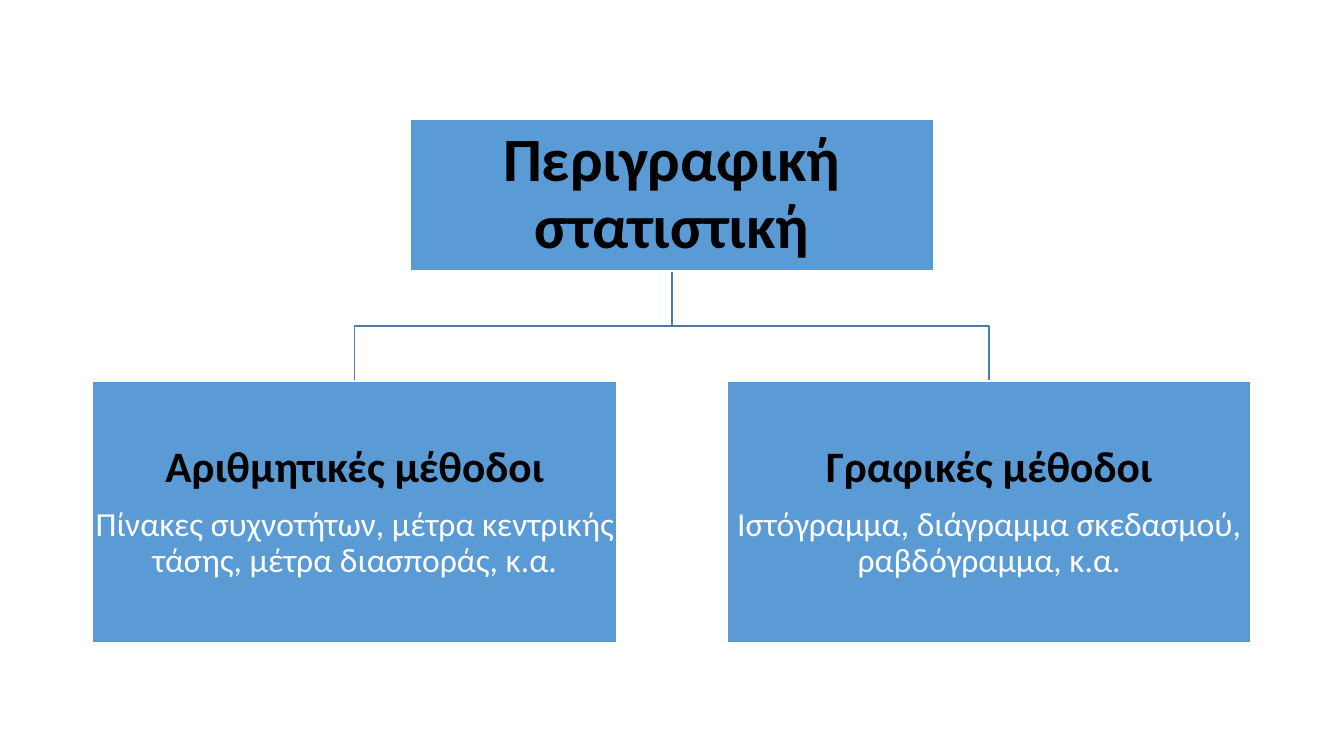
from pptx import Presentation
from pptx.dml.color import RGBColor as RGB
from pptx.enum.shapes import MSO_SHAPE as Shape
from pptx.enum.text import MSO_ANCHOR as Anchor, PP_ALIGN as Align
from pptx.util import Pt

ROOT = [("Περιγραφική στατιστική", "root")]
LEAVES = [
    [("Αριθμητικές μέθοδοι", "head"),
     ("Πίνακες συχνοτήτων, μέτρα κεντρικής τάσης, μέτρα διασποράς, κ.α.", "body")],
    [("Γραφικές μέθοδοι", "head"),
     ("Ιστόγραμμα, διάγραμμα σκεδασμού, ραβδόγραμμα, κ.α.", "body")],
]

THEME = {
    "box": RGB(0x5B, 0x9B, 0xD5),
    "edge": RGB(0xFF, 0xFF, 0xFF),
    "link": RGB(0x49, 0x7C, 0xAB),
    "font": "Calibri",
    "root": {"size": 44, "bold": True, "color": RGB(0, 0, 0)},
    "head": {"size": 31, "bold": True, "color": RGB(0, 0, 0)},
    "body": {"size": 24, "bold": False, "color": RGB(0xFF, 0xFF, 0xFF)},
}

WIDE, HIGH = 960, 540
BOX_W, GAP = 374.4, 78.7
ROOT_TOP, ROOT_H = 85, 108.7
LEAF_TOP, LEAF_H = 272.2, 187.2
ROOT_PAD, LEAF_PAD = 2.2, 1.2


def assign(item, values):
    for name, value in values.items():
        setattr(item, name, value)


def outline(shape, color):
    shape.shadow.inherit = False
    shape.line.color.rgb = color
    shape.line.width = Pt(1)


def add_link(slide, start, end):
    """Draw an elbow that turns halfway down."""
    (x, top), (to, low) = start, end
    mid = (top + low) / 2
    pen = slide.shapes.build_freeform(Pt(x), Pt(top))
    pen.add_line_segments(
        [(Pt(a), Pt(b)) for a, b in ((x, mid), (to, mid), (to, low))],
        close=False)
    link = pen.convert_to_shape()
    link.fill.background()
    outline(link, THEME["link"])


def add_box(slide, mid, top, height, pad, lines):
    box = slide.shapes.add_shape(
        Shape.RECTANGLE, Pt(mid - BOX_W / 2), Pt(top), Pt(BOX_W), Pt(height))
    box.fill.solid()
    box.fill.fore_color.rgb = THEME["box"]
    outline(box, THEME["edge"])
    frame = box.text_frame
    assign(frame, {"word_wrap": True, "vertical_anchor": Anchor.MIDDLE})
    assign(frame, {f"margin_{side}": Pt(pad)
                   for side in ("left", "top", "right", "bottom")})
    for i, (text, role) in enumerate(lines):
        para = frame.add_paragraph() if i else frame.paragraphs[0]
        style = THEME[role]
        assign(para, {"alignment": Align.CENTER, "line_spacing": 0.9,
                      "space_after": Pt(round(style["size"] * 0.35))})
        run = para.add_run()
        run.text = text
        assign(run.font, {"name": THEME["font"], "size": Pt(style["size"]),
                          "bold": style["bold"]})
        run.font.color.rgb = style["color"]


def main():
    deck = Presentation()
    assign(deck, {"slide_width": Pt(WIDE), "slide_height": Pt(HIGH)})
    slide = deck.slides.add_slide(deck.slide_layouts[6])
    center = WIDE / 2
    step = BOX_W + GAP
    first = center - step * (len(LEAVES) - 1) / 2
    mids = [first + i * step for i in range(len(LEAVES))]
    for mid in reversed(mids):
        add_link(slide, (center, ROOT_TOP + ROOT_H), (mid, LEAF_TOP))
    add_box(slide, center, ROOT_TOP, ROOT_H, ROOT_PAD, ROOT)
    for mid, lines in zip(mids, LEAVES):
        add_box(slide, mid, LEAF_TOP, LEAF_H, LEAF_PAD, lines)
    deck.save("out.pptx")


if __name__ == "__main__":
    main()
